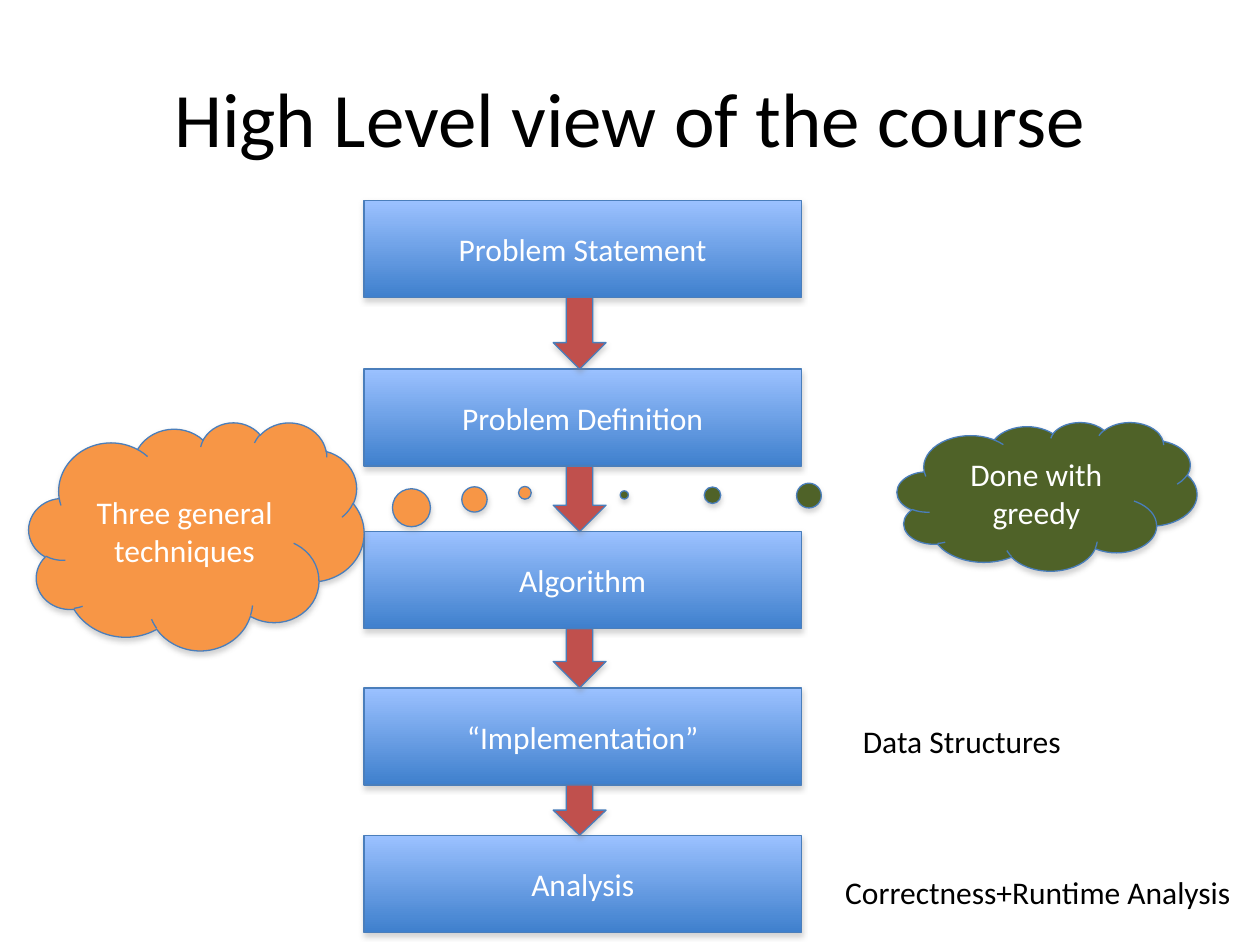
from lxml import etree
from pptx import Presentation
from pptx.dml import color
from pptx.enum import shapes, text
from pptx.oxml import ns
from pptx.util import Inches, Pt

FONT = "Calibri"
WHITE, BLACK = "FFFFFF", "000000"
BLUE_TOP, BLUE_BOTTOM, OUTLINE = "9BC1FF", "3F80CD", "4A7EBB"
RED, ORANGE, GREEN = "C0504D", "F79646", "4F6228"

STEPS = [
    ("Problem Statement", 1.59),
    ("Problem Definition", 2.93),
    ("Algorithm", 4.22),
    ("“Implementation”", 5.46),
    ("Analysis", 6.63),
]
STEP_HEIGHT = 0.77
ARROW_WIDTH = 0.42


def rgb(value):
    return color.RGBColor.from_string(value)


def add_shadow(shape):
    shape.shadow.inherit = False
    effects = shape._element.spPr.find(ns.qn("a:effectLst"))
    shadow = etree.SubElement(
        effects, ns.qn("a:outerShdw"), blurRad=str(Pt(3.1)), dist=str(Pt(1.8)),
        dir="5400000", rotWithShape="0")
    shade = etree.SubElement(shadow, ns.qn("a:srgbClr"), val="808080")
    etree.SubElement(shade, ns.qn("a:alpha"), val="35000")


def write(shape, words, size, ink, align):
    paragraph = shape.text_frame.paragraphs[0]
    paragraph.text = words
    paragraph.alignment = align
    paragraph.font.name = FONT
    paragraph.font.size = Pt(size)
    paragraph.font.color.rgb = rgb(ink)


def add_block(slide, kind, box, fill, words="", adjustments=()):
    """Add an outlined, shadowed shape; a pair of fill colours makes a gradient."""
    shape = slide.shapes.add_shape(kind, *map(Inches, box))
    for index, value in enumerate(adjustments):
        shape.adjustments[index] = value
    if isinstance(fill, tuple):
        shape.fill.gradient()
        shape.fill.gradient_angle = 270
        for stop, value, position in zip(shape.fill.gradient_stops, fill, (0, 1)):
            stop.color.rgb = rgb(value)
            stop.position = position
    else:
        shape.fill.solid()
        shape.fill.fore_color.rgb = rgb(fill)
    shape.line.color.rgb = rgb(OUTLINE)
    shape.line.width = Pt(0.75)
    add_shadow(shape)
    if words:
        shape.text_frame.word_wrap = True
        shape.text_frame.vertical_anchor = text.MSO_ANCHOR.MIDDLE
        write(shape, words, 18, WHITE, text.PP_ALIGN.CENTER)
    return shape


def add_title(slide, box, words):
    title = slide.shapes.title
    title.left, title.top, title.width, title.height = map(Inches, box)
    title.text_frame.vertical_anchor = text.MSO_ANCHOR.MIDDLE
    write(title, words, 44, BLACK, text.PP_ALIGN.CENTER)


def add_flow(slide, left, width):
    """Stack the steps and fill each gap between them with an arrow."""
    for words, top in STEPS:
        add_block(slide, shapes.MSO_SHAPE.RECTANGLE,
                  (left, top, width, STEP_HEIGHT), (BLUE_TOP, BLUE_BOTTOM), words)
    arrow_left = left + 1.5
    for (_, above), (_, below) in zip(STEPS, STEPS[1:]):
        start = above + STEP_HEIGHT
        add_block(slide, shapes.MSO_SHAPE.DOWN_ARROW,
                  (arrow_left, start, ARROW_WIDTH, below - start), RED)


def add_label(slide, box, words):
    label = slide.shapes.add_textbox(*map(Inches, box))
    label.text_frame.word_wrap = False
    label.text_frame.auto_size = text.MSO_AUTO_SIZE.SHAPE_TO_FIT_TEXT
    write(label, words, 18, BLACK, text.PP_ALIGN.LEFT)


def add_thought(slide, box, fill, words, pointer):
    add_block(slide, shapes.MSO_SHAPE.CLOUD_CALLOUT, box, fill, words, pointer)


def main():
    presentation = Presentation()
    presentation.slide_width, presentation.slide_height = Inches(10), Inches(7.5)
    slide = presentation.slides.add_slide(presentation.slide_layouts[5])

    add_title(slide, (0.5, 0.3, 9, 1.25), "High Level view of the course")
    add_flow(slide, 2.89, 3.47)

    # Notes beside the last two steps
    add_label(slide, (6.75, 5.68, 1.79, 0.4), "Data Structures")
    add_label(slide, (6.61, 6.88, 3.29, 0.4), "Correctness+Runtime Analysis")

    # Thought clouds pointing at the Algorithm step
    add_thought(slide, (0.23, 3.35, 2.66, 1.81), ORANGE,
                "Three general techniques", (0.98, -0.19))
    add_thought(slide, (7.12, 3.35, 2.38, 1.18), GREEN,
                "Done with greedy", (-1.41, -0.01))

    presentation.save("out.pptx")


if __name__ == "__main__":
    main()
